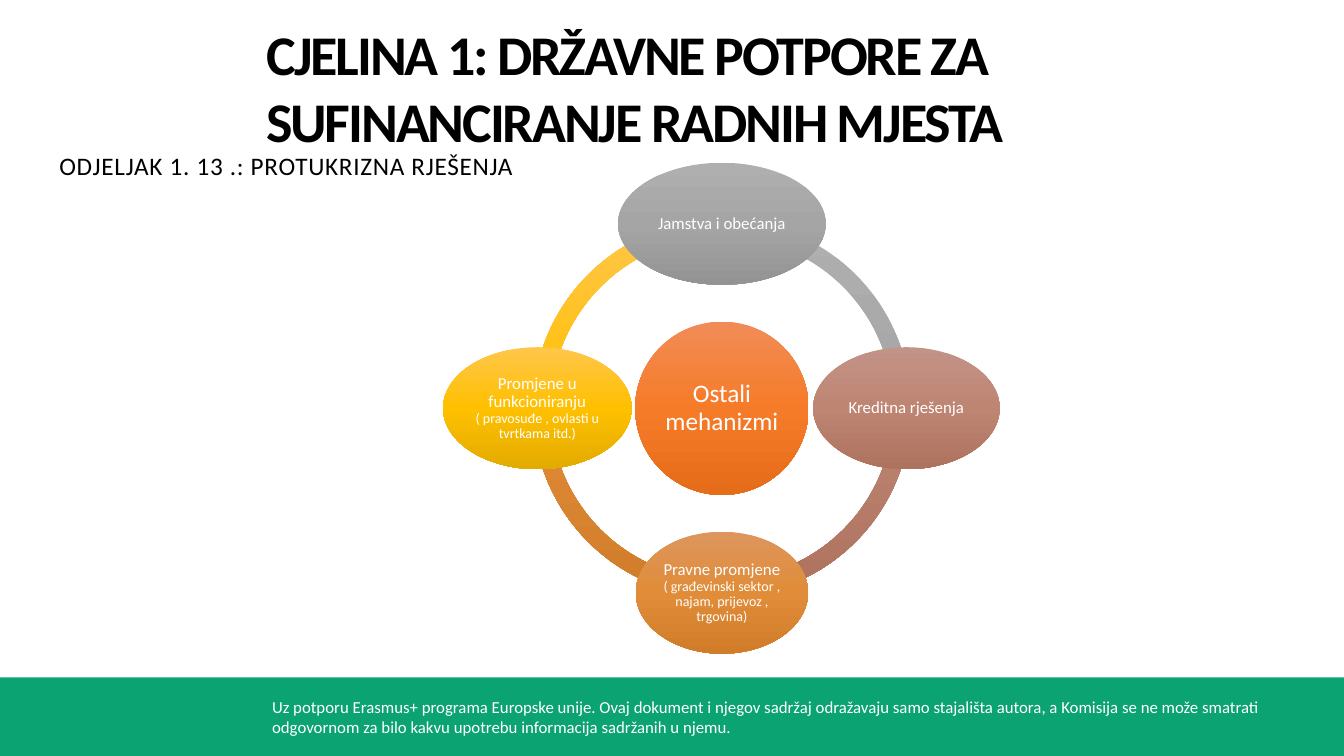
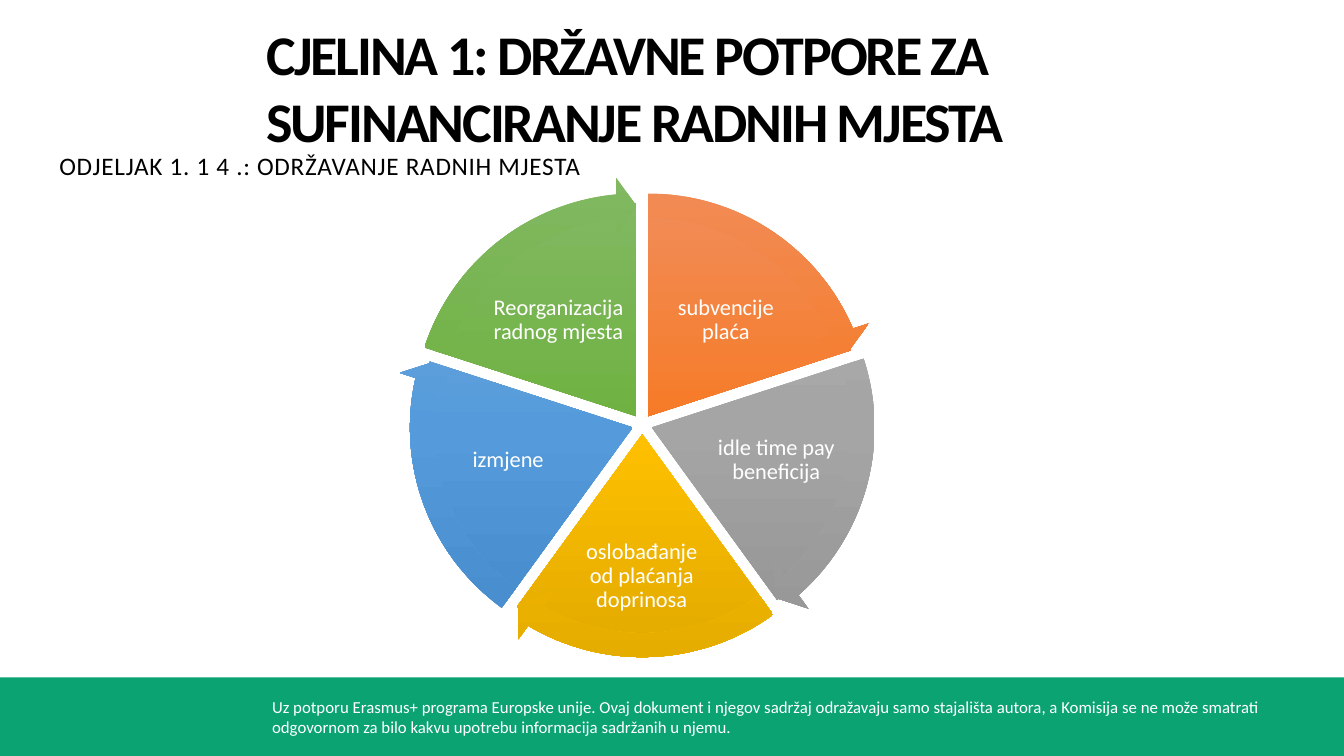
from dataclasses import dataclass
from math import cos, radians, sin

from lxml import etree
from pptx import Presentation
from pptx.dml.color import RGBColor
from pptx.enum import shapes, text
from pptx.oxml.ns import qn
from pptx.util import Inches, Pt


@dataclass(frozen=True)
class Theme:
    font: str = "Calibri"
    black: str = "000000"
    white: str = "FFFFFF"
    band: str = "0CA373"
    # Gradients run from top to bottom
    orange: tuple = ("F18C57", "F67B28", "E56C19")
    grey: tuple = ("AFAFAF", "A5A5A5", "939393")
    brown: tuple = ("C29387", "BE8573", "AD735F")
    amber: tuple = ("DE965E", "E08C38", "D07C29")
    yellow: tuple = ("FFC64B", "FFC000", "E3AB00")
    blue: tuple = ("71A6DB", "559BDB", "448ACA")
    green: tuple = ("81B861", "6FB242", "62A336")
    title: int = 40
    heading: int = 18
    segment: int = 16
    body: int = 12
    detail: int = 10


THEME = Theme()
FULL_TURN = 216  # 360 degrees in the units of shape adjustments
TOP = 162        # twelve o'clock in the same units


def add_shape(slide, kind, box, fill, adjustments=()):
    """Add a shape without line or shadow; fill is a colour or a gradient."""
    shape = slide.shapes.add_shape(kind, *(Inches(v) for v in box))
    for index, value in enumerate(adjustments):
        shape.adjustments[index] = value
    if isinstance(fill, str):
        shape.fill.solid()
        shape.fill.fore_color.rgb = RGBColor.from_string(fill)
    else:
        gradient = etree.SubElement(shape._element.spPr, qn("a:gradFill"), rotWithShape="1")
        stops = etree.SubElement(gradient, qn("a:gsLst"))
        for position, color in zip((0, 50000, 100000), fill):
            stop = etree.SubElement(stops, qn("a:gs"), pos=str(position))
            etree.SubElement(stop, qn("a:srgbClr"), val=color)
        etree.SubElement(gradient, qn("a:lin"), ang="5400000", scaled="0")
    shape.line.fill.background()
    shape.shadow.inherit = False
    return shape


def write(slide, target, runs, color=THEME.white, centered=True, inset=0.02,
          bold=False, spacing=0):
    """Write (text, size) runs into a shape, or into a new box at given inches."""
    if isinstance(target, tuple):
        target = slide.shapes.add_textbox(*(Inches(v) for v in target))
    frame = target.text_frame
    frame.word_wrap = True
    frame.margin_left = frame.margin_right = Inches(inset)
    frame.margin_top = frame.margin_bottom = Inches(inset / 2 if inset == 0.1 else inset)
    paragraph = frame.paragraphs[0]
    if centered:
        frame.vertical_anchor = text.MSO_ANCHOR.MIDDLE
        paragraph.alignment = text.PP_ALIGN.CENTER
        paragraph.line_spacing = 0.9
    else:
        frame.vertical_anchor = text.MSO_ANCHOR.TOP
        frame.auto_size = text.MSO_AUTO_SIZE.SHAPE_TO_FIT_TEXT
    for words, size in runs:
        run = paragraph.add_run()
        run.text = words
        run.font.name = THEME.font
        run.font.size = Pt(size)
        run.font.bold = bold
        run.font.color.rgb = RGBColor.from_string(color)
        if spacing:
            run._r.get_or_add_rPr().set("spc", str(spacing))


prs = Presentation()
prs.slide_width, prs.slide_height = Inches(13.33), Inches(7.5)

# Shared footer, title and section heading
headings = [
    "ODJELJAK 1. 13 .: PROTUKRIZNA RJEŠENJA",
    "ODJELJAK 1. 1 4 .: ODRŽAVANJE RADNIH MJESTA",
]
disclaimer = (
    "Uz potporu Erasmus+ programa Europske unije. Ovaj dokument i njegov sadržaj "
    "odražavaju samo stajališta autora, a Komisija se ne može smatrati odgovornom "
    "za bilo kakvu upotrebu informacija sadržanih u njemu."
)
unit_title = "CJELINA 1: DRŽAVNE POTPORE ZA SUFINANCIRANJE RADNIH MJESTA"
for heading in headings:
    slide = prs.slides.add_slide(prs.slide_layouts[6])
    add_shape(slide, shapes.MSO_SHAPE.RECTANGLE, (0, 6.72, 13.33, 0.78), THEME.band)
    write(slide, (2.6, 6.86, 10.42, 0.5), [(disclaimer, THEME.body)],
          centered=False, inset=0.1)
    write(slide, (2.64, 0.19, 8.98, 0.69), [(unit_title, THEME.title)], THEME.black,
          centered=False, inset=0, bold=True, spacing=-150)
    write(slide, (0.49, 1.44, 6.66, 0.4), [(heading, THEME.heading)], THEME.black,
          centered=False, inset=0.1, spacing=50)
crisis, jobs = prs.slides

# Slide 1: ring of mechanisms, clockwise from the top
hub_x, hub_y = 7.16, 4.05
orbit = 1.83
ring = 3.75
node_height = 1.21
mechanisms = [
    (2.06, THEME.grey, [("Jamstva i obećanja", THEME.body)]),
    (1.85, THEME.brown, [("Kreditna rješenja", THEME.body)]),
    (1.71, THEME.amber, [("Pravne promjene ", THEME.body),
                         ("( građevinski sektor , najam, prijevoz , trgovina)", THEME.detail)]),
    (1.87, THEME.yellow, [("Promjene u funkcioniranju ", THEME.body),
                          ("( pravosuđe , ovlasti u tvrtkama itd.)", THEME.detail)]),
]
quarter = FULL_TURN / len(mechanisms)
for index, (width, gradient, runs) in reversed(list(enumerate(mechanisms))):
    start = (TOP + index * quarter) % FULL_TURN
    add_shape(crisis, shapes.MSO_SHAPE.BLOCK_ARC,
              (hub_x - ring / 2, hub_y - ring / 2, ring, ring), gradient,
              (start, (start + quarter) % FULL_TURN, 0.046))

hub = add_shape(crisis, shapes.MSO_SHAPE.OVAL,
                (hub_x - 0.86, hub_y - 0.86, 1.72, 1.72), THEME.orange)
write(crisis, hub, [("Ostali mehanizmi", THEME.heading)], inset=0.03)

for index, (width, gradient, runs) in enumerate(mechanisms):
    angle = radians(index * 90 - 90)
    node_x = hub_x + orbit * cos(angle)
    node_y = hub_y + orbit * sin(angle)
    node = add_shape(crisis, shapes.MSO_SHAPE.OVAL,
                     (node_x - width / 2, node_y - node_height / 2, width, node_height),
                     gradient)
    write(crisis, node, runs)

# Slide 2: cycle of measures, clockwise from the top
wheel_x, wheel_y = 6.37, 4.21
gap = 0.1
pie = 4.23
arrow = 4.75
measures = [
    ("subvencije plaća", THEME.orange, (6.52, 2.72, 1.36, 0.91)),
    ("idle time pay beneficija", THEME.grey, (7.07, 4.06, 1.26, 1.01)),
    ("oslobađanje od plaćanja doprinosa", THEME.yellow, (5.76, 5.16, 1.21, 1.11)),
    ("izmjene", THEME.blue, (4.41, 4.06, 1.26, 1.01)),
    ("Reorganizacija radnog mjesta", THEME.green, (4.86, 2.72, 1.36, 0.91)),
]
fifth = FULL_TURN / len(measures)
wedges = []
for index, (label, gradient, label_box) in enumerate(measures):
    start = (TOP + index * fifth) % FULL_TURN
    end = (start + fifth) % FULL_TURN
    bisector = radians((index + 0.5) * 72 - 90)
    center_x = wheel_x + gap * cos(bisector)
    center_y = wheel_y + gap * sin(bisector)
    wedges.append((center_x, center_y, start, end, gradient))
    add_shape(jobs, shapes.MSO_SHAPE.PIE,
              (center_x - pie / 2, center_y - pie / 2, pie, pie), gradient, (start, end))
    write(jobs, label_box, [(label, THEME.segment)])

# Arrow rims over the wedges
head = 3.28
for center_x, center_y, start, end, gradient in wedges:
    add_shape(jobs, shapes.MSO_SHAPE.CIRCULAR_ARROW,
              (center_x - arrow / 2, center_y - arrow / 2, arrow, arrow), gradient,
              (0.05, head, end - head, start, 0.06))

prs.save("out.pptx")
